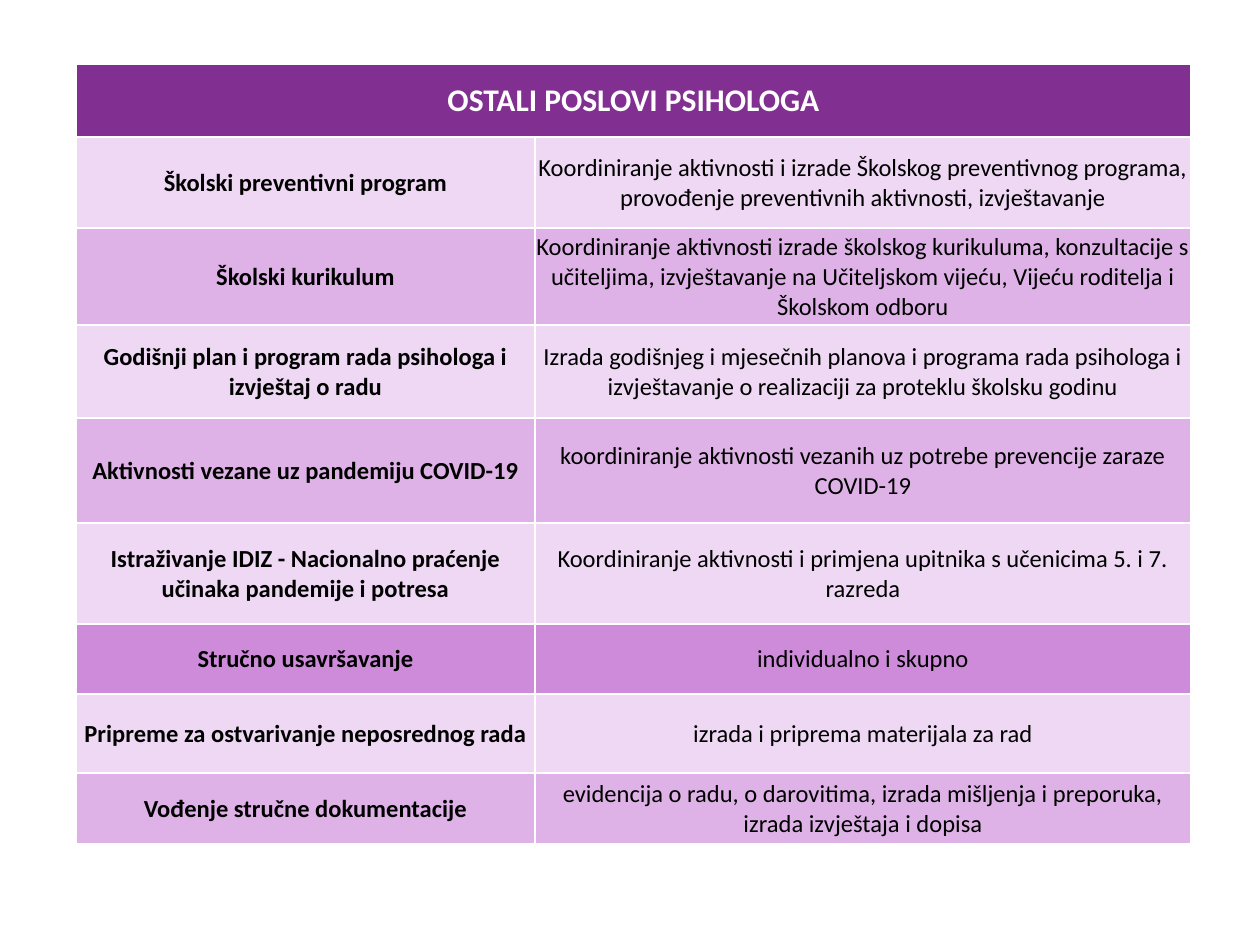
from dataclasses import dataclass

from lxml import etree
from pptx import Presentation
from pptx.dml.color import RGBColor
from pptx.enum.text import MSO_ANCHOR, PP_ALIGN
from pptx.oxml.ns import qn
from pptx.util import Emu, Pt

MIDDLE = MSO_ANCHOR.MIDDLE
CENTER = PP_ALIGN.CENTER
PX_PER_INCH = 126
EMU_PER_INCH = 914400


@dataclass(frozen=True)
class Theme:
    font: str = "Calibri"
    title_size: int = 18
    body_size: int = 14
    border_width: int = 1
    white: str = "FFFFFF"
    black: str = "000000"
    header: str = "812F91"
    light: str = "EED8F3"
    medium: str = "DEB2E6"
    strong: str = "CD8BDA"


THEME = Theme()

TITLE = "OSTALI POSLOVI PSIHOLOGA"
HEADER_HEIGHT = 73
COLUMN_WIDTHS = (459, 656)
TASKS = [
    (91, THEME.light, "Školski preventivni program",
     "Koordiniranje aktivnosti i izrade Školskog preventivnog programa, "
     "provođenje preventivnih aktivnosti, izvještavanje"),
    (97, THEME.medium, "Školski kurikulum",
     "Koordiniranje aktivnosti izrade školskog kurikuluma, konzultacije s "
     "učiteljima, izvještavanje na Učiteljskom vijeću, Vijeću roditelja i "
     "Školskom odboru"),
    (93, THEME.light, "Godišnji plan i program rada psihologa i izvještaj o radu",
     "Izrada godišnjeg i mjesečnih planova i programa rada psihologa i "
     "izvještavanje o realizaciji za proteklu školsku godinu"),
    (105, THEME.medium, "Aktivnosti vezane uz pandemiju COVID-19",
     "koordiniranje aktivnosti vezanih uz potrebe prevencije zaraze COVID-19"),
    (101, THEME.light,
     "Istraživanje IDIZ - Nacionalno praćenje učinaka pandemije i potresa",
     "Koordiniranje aktivnosti i primjena upitnika s učenicima 5. i 7. razreda"),
    (70, THEME.strong, "Stručno usavršavanje", "individualno i skupno"),
    (79, THEME.light, "Pripreme za ostvarivanje neposrednog rada",
     "izrada i priprema materijala za rad"),
    (71, THEME.medium, "Vođenje stručne dokumentacije",
     "evidencija o radu, o darovitima, izrada mišljenja i preporuka, "
     "izrada izvještaja i dopisa"),
]


def px(n):
    return Emu(round(n * EMU_PER_INCH / PX_PER_INCH))


def set_borders(cell):
    tc_pr = cell._tc.get_or_add_tcPr()
    for i, side in enumerate(("lnL", "lnR", "lnT", "lnB")):
        ln = etree.Element(qn(f"a:{side}"), w=str(Pt(THEME.border_width)))
        fill = etree.SubElement(ln, qn("a:solidFill"))
        etree.SubElement(fill, qn("a:srgbClr"), val=THEME.white)
        tc_pr.insert(i, ln)


def style_cell(cell, fill):
    cell.fill.solid()
    cell.fill.fore_color.rgb = RGBColor.from_string(fill)
    cell.vertical_anchor = MIDDLE
    cell.margin_left = cell.margin_right = cell.margin_top = px(1)
    cell.margin_bottom = 0
    set_borders(cell)


def write_cell(cell, text, size, color, bold):
    cell.text = text
    p = cell.text_frame.paragraphs[0]
    p.alignment = CENTER
    p.font.name = THEME.font
    p.font.size = Pt(size)
    p.font.bold = bold
    p.font.color.rgb = RGBColor.from_string(color)


def add_task_table(slide):
    heights = [HEADER_HEIGHT] + [task[0] for task in TASKS]
    frame = slide.shapes.add_table(
        len(heights), len(COLUMN_WIDTHS),
        px(76), px(64), px(sum(COLUMN_WIDTHS)), px(sum(heights)))
    table = frame.table
    for column, width in zip(table.columns, COLUMN_WIDTHS):
        column.width = px(width)
    for row, height in zip(table.rows, heights):
        row.height = px(height)

    for cell in table.rows[0].cells:
        style_cell(cell, THEME.header)
    title = table.cell(0, 0)
    title.merge(table.cell(0, 1))
    write_cell(title, TITLE, THEME.title_size, THEME.white, True)

    for i, (_, fill, task, description) in enumerate(TASKS, start=1):
        for j, text in enumerate((task, description)):
            cell = table.cell(i, j)
            style_cell(cell, fill)
            write_cell(cell, text, THEME.body_size, THEME.black, j == 0)


def main():
    prs = Presentation()
    prs.slide_width = px(1260)
    prs.slide_height = px(945)
    slide = prs.slides.add_slide(prs.slide_layouts[6])
    add_task_table(slide)
    prs.save("out.pptx")


if __name__ == "__main__":
    main()
